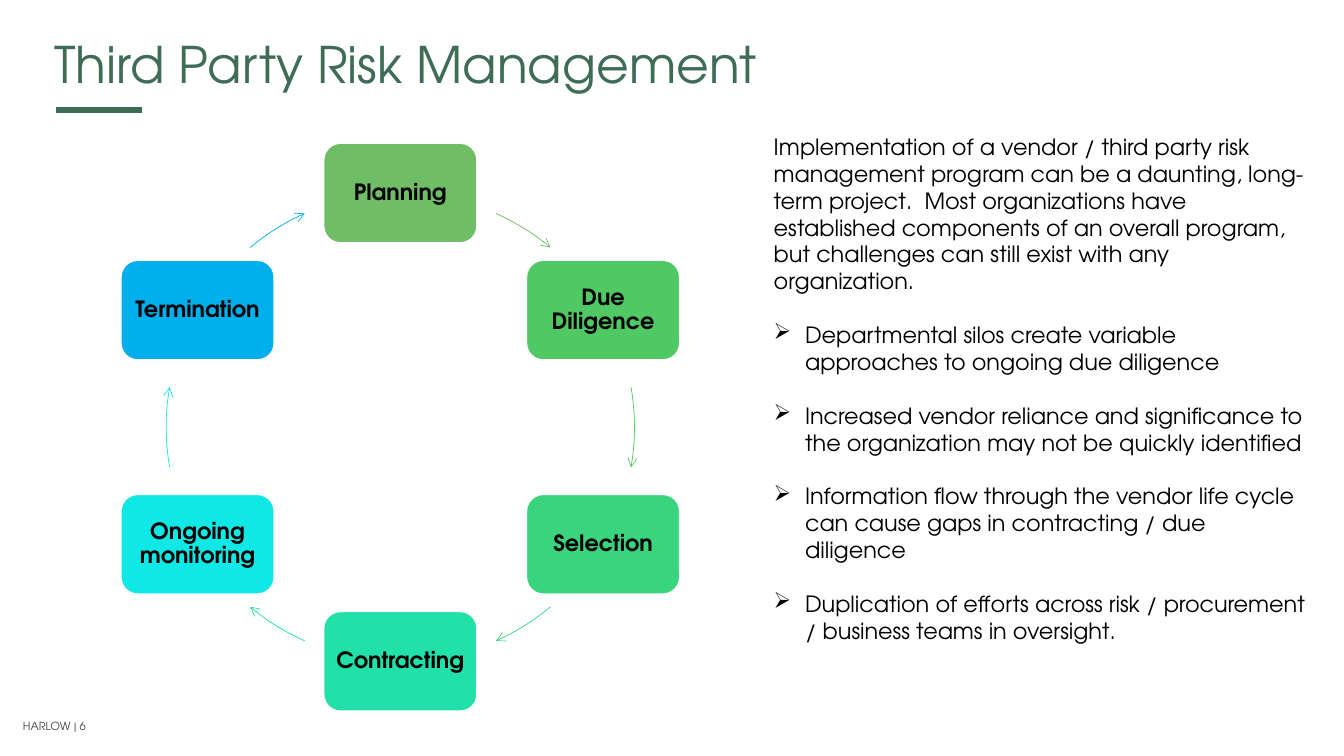
from math import cos, radians, sin

from lxml import etree
from pptx import Presentation
from pptx.dml.color import RGBColor
from pptx.enum.shapes import MSO_CONNECTOR, MSO_SHAPE
from pptx.enum.text import MSO_ANCHOR, MSO_AUTO_SIZE, PP_ALIGN
from pptx.oxml.ns import qn
from pptx.util import Cm, Pt

STRAIGHT = MSO_CONNECTOR.STRAIGHT
ARC, ROUNDED = MSO_SHAPE.ARC, MSO_SHAPE.ROUNDED_RECTANGLE
MIDDLE, BOTTOM = MSO_ANCHOR.MIDDLE, MSO_ANCHOR.BOTTOM
NO_FIT, GROW = MSO_AUTO_SIZE.NONE, MSO_AUTO_SIZE.SHAPE_TO_FIT_TEXT
LEFT, CENTER = PP_ALIGN.LEFT, PP_ALIGN.CENTER

FONT = "TeX Gyre Adventor"
PINE = RGBColor(0x3E, 0x6C, 0x57)
GREY = RGBColor(0x41, 0x40, 0x42)
BLACK = RGBColor(0, 0, 0)
WHITE = RGBColor(0xFF, 0xFF, 0xFF)

STAGES = [
    ("Planning", RGBColor(0x6F, 0xBE, 0x65)),
    ("Due Diligence", RGBColor(0x50, 0xC8, 0x63)),
    ("Selection", RGBColor(0x39, 0xD4, 0x7D)),
    ("Contracting", RGBColor(0x21, 0xE1, 0xA9)),
    ("Ongoing monitoring", RGBColor(0x0F, 0xE8, 0xE5)),
    ("Termination", RGBColor(0x00, 0xAF, 0xEC)),
]
STAGE_WIDTH, STAGE_HEIGHT = 3.86, 2.51
STEP = 360 / len(STAGES)
POLE_CLEARANCE, SIDE_CLEARANCE = 24.1, 20.1

INTRO = (
    "Implementation of a vendor / third party risk management program can be "
    "a daunting, long-term project.  Most organizations have established "
    "components of an overall program, but challenges can still exist with "
    "any organization."
)
CHALLENGES = [
    "Departmental silos create variable approaches to ongoing due diligence",
    "Increased vendor reliance and significance to the organization may not "
    "be quickly identified",
    "Information flow through the vendor life cycle can cause gaps in "
    "contracting / due diligence",
    "Duplication of efforts across risk / procurement / business teams in "
    "oversight.",
]


def style(paragraph, size, color, bold=False):
    """Format every run of a paragraph."""
    for run in paragraph.runs:
        run.font.name = FONT
        run.font.size = Pt(size)
        run.font.bold = bold
        run.font.color.rgb = color


def add_bullet(paragraph):
    """Give a paragraph a hanging arrow bullet."""
    properties = paragraph._p.get_or_add_pPr()
    properties.set("marL", str(Cm(0.79)))
    properties.set("indent", str(Cm(-0.79)))
    etree.SubElement(properties, qn("a:buChar")).set("char", "➢")


def build_heading(slide, left, top, width, height):
    """Place the title and the short rule beneath it."""
    title = slide.shapes.title
    title.left, title.top = Cm(left), Cm(top)
    title.width, title.height = Cm(width), Cm(height)
    frame = title.text_frame
    frame.text = "Third Party Risk Management"
    frame.auto_size = NO_FIT
    frame.vertical_anchor = BOTTOM
    heading = frame.paragraphs[0]
    heading.alignment = LEFT
    heading.line_spacing = 0.9
    style(heading, 36, PINE)

    rule_left, rule_top = left + 0.28, top + height + 0.26
    rule = slide.shapes.add_connector(
        STRAIGHT, Cm(rule_left), Cm(rule_top), Cm(rule_left + 2.18), Cm(rule_top)
    )
    rule.line.color.rgb = PINE
    rule.line.width = Pt(4.5)
    etree.SubElement(rule._element.spPr, qn("a:effectLst"))


def add_stage(slide, name, color, center_x, center_y):
    """Draw one stage of the cycle around its centre."""
    stage = slide.shapes.add_shape(
        ROUNDED,
        Cm(center_x - STAGE_WIDTH / 2), Cm(center_y - STAGE_HEIGHT / 2),
        Cm(STAGE_WIDTH), Cm(STAGE_HEIGHT),
    )
    stage.shadow.inherit = False
    stage.fill.solid()
    stage.fill.fore_color.rgb = color
    stage.line.color.rgb = WHITE
    stage.line.width = Pt(1)
    frame = stage.text_frame
    frame.word_wrap = True
    frame.vertical_anchor = MIDDLE
    frame.margin_left = frame.margin_right = Cm(0.12)
    frame.text = name
    label = frame.paragraphs[0]
    label.alignment = CENTER
    label.line_spacing = 0.9
    style(label, 16, BLACK, bold=True)


def add_arrow(slide, color, left, top, diameter, start, end):
    """Draw a clockwise arrow along the cycle between two angles."""
    arrow = slide.shapes.add_shape(
        ARC, Cm(left), Cm(top), Cm(diameter), Cm(diameter)
    )
    arrow.shadow.inherit = False
    arrow.fill.background()
    for index, angle in enumerate((start, end)):
        arrow.adjustments[index] = angle % 360 * 0.6
    arrow.line.color.rgb = color
    arrow.line.width = Pt(0.5)
    outline = arrow.line._get_or_add_ln()
    etree.SubElement(outline, qn("a:tailEnd")).set("type", "arrow")


def build_cycle(slide, left, top, width, height):
    """Place the stages and arrows on a circle that fills the box."""
    center_x, center_y = left + width / 2, top + height / 2
    radius = (height - STAGE_HEIGHT) / 2
    for index, (name, color) in enumerate(STAGES):
        angle = index * STEP - 90
        add_stage(
            slide, name, color,
            center_x + radius * cos(radians(angle)),
            center_y + radius * sin(radians(angle)),
        )
        before, after = (
            POLE_CLEARANCE if place % 3 == 0 else SIDE_CLEARANCE
            for place in (index, index + 1)
        )
        add_arrow(
            slide, color, center_x - radius, center_y - radius, 2 * radius,
            angle + before, angle + STEP - after,
        )


def build_challenges(slide, left, top, width, height):
    """Place the introduction and the bulleted challenges."""
    box = slide.shapes.add_textbox(Cm(left), Cm(top), Cm(width), Cm(height))
    frame = box.text_frame
    frame.word_wrap = True
    frame.auto_size = GROW
    frame.text = INTRO
    style(frame.paragraphs[0], 16, BLACK)
    for challenge in CHALLENGES:
        item = frame.add_paragraph()
        item.text = challenge
        item.space_before = Pt(19.2)
        add_bullet(item)
        style(item, 16, BLACK)


def build_footer(slide, left, top, width, height):
    """Place the firm name and page number."""
    box = slide.shapes.add_textbox(Cm(left), Cm(top), Cm(width), Cm(height))
    frame = box.text_frame
    frame.word_wrap = True
    frame.vertical_anchor = BOTTOM
    frame.margin_left = Cm(0.33)
    frame.text = "HARLOW | 6"
    style(frame.paragraphs[0], 8, GREY)


def main():
    """Build and save the slide."""
    deck = Presentation()
    deck.slide_width, deck.slide_height = Cm(33.87), Cm(19.05)
    slide = deck.slides.add_slide(deck.slide_layouts[5])
    build_footer(slide, 0.25, 17.45, 7.57, 1.14)
    build_heading(slide, 1.12, 0.48, 31.57, 2.03)
    build_cycle(slide, 3.05, 3.61, 14.08, 14.31)
    build_challenges(slide, 19.25, 3.23, 13.97, 13.94)
    deck.save("out.pptx")


if __name__ == "__main__":
    main()
